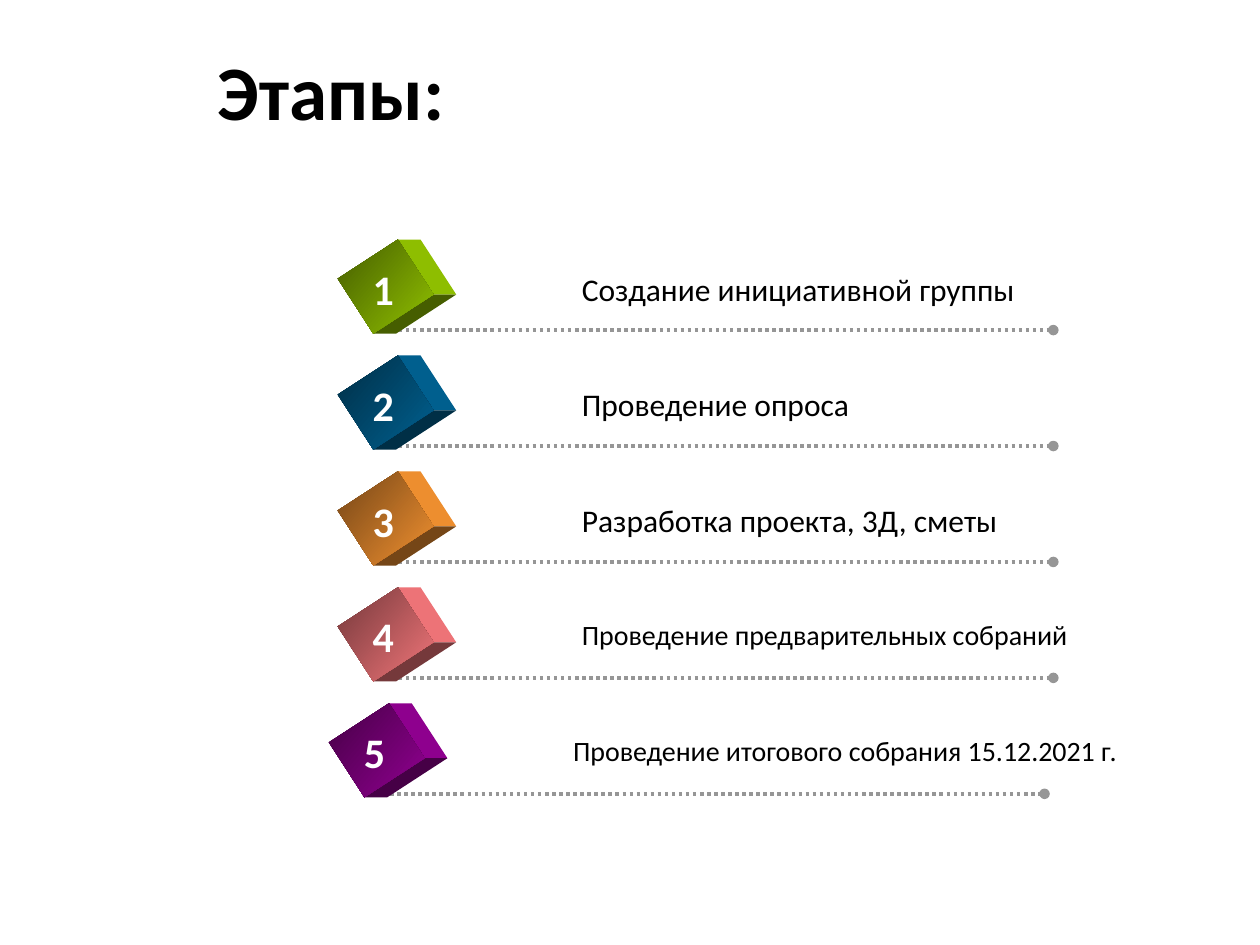
import math

from lxml import etree
from pptx import Presentation
from pptx import util as u
from pptx.dml.color import RGBColor
from pptx.enum import dml, shapes, text
from pptx.oxml.ns import qn

BLACK = RGBColor(0x00, 0x00, 0x00)
WHITE = RGBColor(0xFF, 0xFF, 0xFF)
GREY = RGBColor(0x96, 0x96, 0x96)
GREEN = RGBColor(0x99, 0xCC, 0x00)
BLUE = RGBColor(0x00, 0x66, 0x99)
ORANGE = RGBColor(0xFF, 0x99, 0x33)
PINK = RGBColor(0xFF, 0x7C, 0x80)
PURPLE = RGBColor(0x99, 0x00, 0x99)

# Label, size, label width, colour, shift to the right
STAGES = [
    ("Создание инициативной группы", 18, 3.76, GREEN, 0),
    ("Проведение опроса", 18, 2.41, BLUE, 0),
    ("Разработка проекта, 3Д, сметы", 18, 3.54, ORANGE, 0),
    ("Проведение предварительных собраний", 16, 4.2, PINK, 0),
    ("Проведение итогового собрания 15.12.2021 г.", 16, 4.58, PURPLE, -0.07),
]
TOP, PITCH = 1.99, 0.92


def shade(color, factor):
    return RGBColor(*(round(c * factor) for c in color))


class Deck:
    font = "Calibri"
    cube_w, cube_h, turn, depth = 0.52, 0.57, 57, 0.18

    def __init__(self, s):
        self.s = s

    def label(self, parent, x, y, w, h, words, size, color=BLACK, bold=False):
        sp = parent.add_textbox(u.Inches(x), u.Inches(y), u.Inches(w), u.Inches(h))
        tf = sp.text_frame
        tf.word_wrap = False
        p = tf.paragraphs[0]
        r = p.add_run()
        r.text = words
        r.font.name, r.font.size, r.font.bold = self.font, u.Pt(size), bold
        r.font.color.rgb = color
        return tf

    def title(self, words):
        tf = self.label(self.s.shapes, 1.63, 0.14, 7.68, 1.24, words, 44, bold=True)
        tf.word_wrap = True
        tf.vertical_anchor = text.MSO_ANCHOR.MIDDLE
        tf.paragraphs[0].line_spacing = 0.9

    def dotted_line(self, parent, x, y, length):
        sp = parent.add_connector(shapes.MSO_CONNECTOR.STRAIGHT, u.Inches(x),
                                  u.Inches(y), u.Inches(x + length), u.Inches(y))
        sp.line.color.rgb = GREY
        sp.line.width = u.Pt(2)
        sp.line.dash_style = dml.MSO_LINE.ROUND_DOT
        ln = sp.line._get_or_add_ln()
        etree.SubElement(ln, qn("a:tailEnd"), type="oval")
        etree.SubElement(sp._element.spPr, qn("a:effectLst"))

    def face(self, parent, points, color):
        points = [(u.Inches(x), u.Inches(y)) for x, y in points]
        builder = parent.build_freeform(*points[0])
        builder.add_line_segments(points[1:])
        sp = builder.convert_to_shape()
        sp.shadow.inherit = False
        sp.fill.solid()
        sp.fill.fore_color.rgb = color
        sp.line.fill.background()

    def cube(self, parent, x, y, color):
        w, h = self.cube_w, self.cube_h
        cos, sin = (f(math.radians(self.turn)) for f in (math.cos, math.sin))

        def corner(dx, dy, shift=0):
            dx, dy = dx * w / 2, dy * h / 2
            return (x + w / 2 + dx * cos - dy * sin + shift,
                    y + h / 2 + dx * sin + dy * cos)

        # Side and bottom faces, pushed out from the edges of the front
        for a, b, factor in [((-1, -1), (1, -1), 0.93), ((1, -1), (1, 1), 0.46)]:
            outline = [corner(*a), corner(*a, self.depth),
                       corner(*b, self.depth), corner(*b)]
            self.face(parent, outline, shade(color, factor))

        # Front face
        sp = parent.add_shape(shapes.MSO_SHAPE.RECTANGLE, u.Inches(x), u.Inches(y),
                              u.Inches(w), u.Inches(h))
        sp.rotation = self.turn
        sp.shadow.inherit = False
        sp.line.fill.background()
        sp.fill.gradient()
        sp.fill.gradient_angle = 17
        for stop, factor in zip(sp.fill.gradient_stops, (0.45, 0.95)):
            stop.color.rgb = shade(color, factor)

    def stage(self, number, words, size, width, color, shift):
        x, y = 2.8 + shift, TOP + (number - 1) * PITCH
        group = self.s.shapes.add_group_shape().shapes
        self.dotted_line(group, x + 0.31, y + 0.63, 5.25)
        self.cube(group, x, y, color)
        self.label(group, x + 1.72, y + 0.1, width, 0.4, words, size)
        self.label(group, x + 0.06, y + 0.05, 0.39, 0.5, str(number), 24, WHITE, True)


def main():
    prs = Presentation()
    prs.slide_width, prs.slide_height = u.Inches(10), u.Inches(7.5)
    deck = Deck(prs.slides.add_slide(prs.slide_layouts[6]))

    # Heading
    deck.title("Этапы:")

    # Numbered stages
    for number, stage in enumerate(STAGES, 1):
        deck.stage(number, *stage)

    prs.save("out.pptx")


if __name__ == "__main__":
    main()
